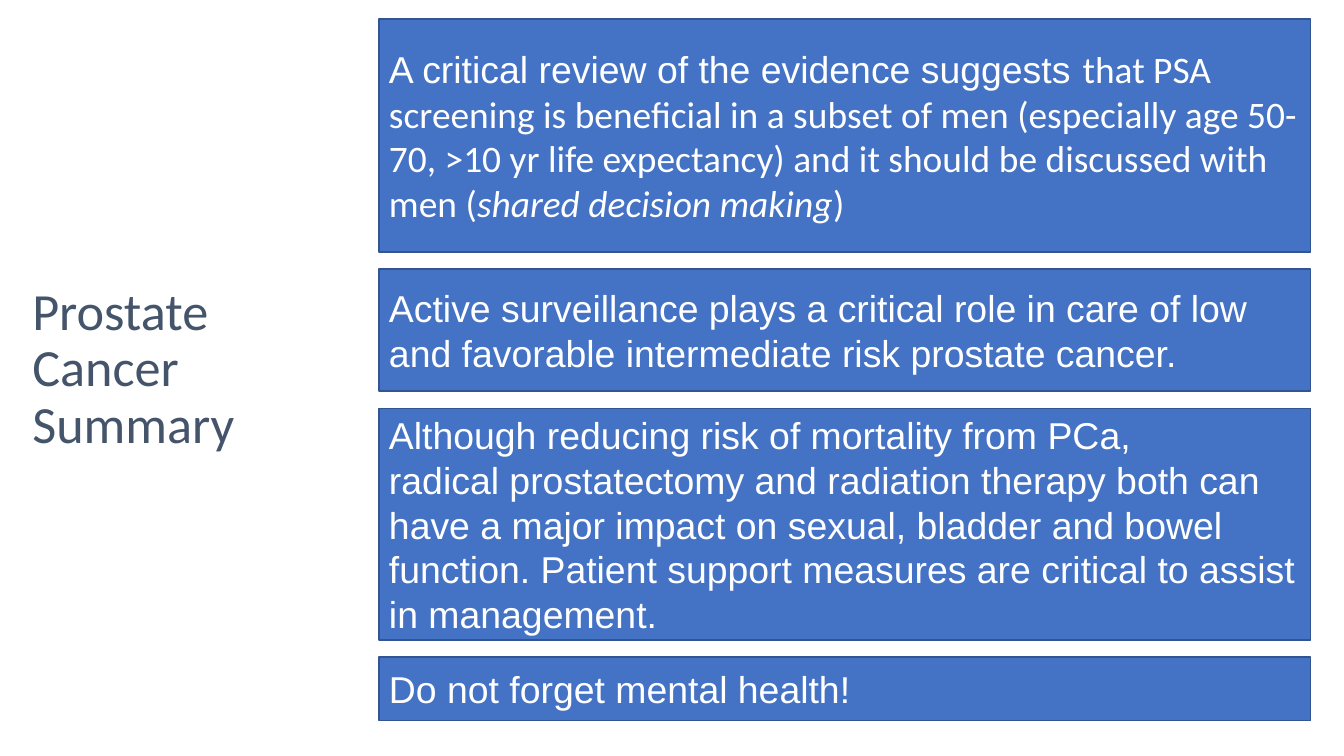
from pptx import Presentation
from pptx.dml.color import RGBColor
from pptx.enum.shapes import MSO_SHAPE
from pptx.enum.text import MSO_ANCHOR, MSO_AUTO_SIZE, PP_ALIGN
from pptx.util import Inches, Pt

COLORS = {"white": "FFFFFF", "blue": "4472C4", "edge": "325491", "slate": "44546A"}
TOP, GAP = 0.19, 0.17
BOXES = [
    (2.31, "A critical review of the evidence suggests ", [
        ("that PSA screening is beneficial in a subset of men (especially age "
         "50-70, >10 yr life expectancy) and it should be discussed with men (", False),
        ("shared decision making", True),
        (")", False),
    ]),
    (1.21, "Active surveillance plays a critical role in care of low and "
           "favorable intermediate risk prostate cancer.", []),
    (2.3, "Although reducing risk of mortality from PCa, \vradical prostatectomy "
          "and radiation therapy both can have a major impact on sexual, bladder "
          "and bowel function. Patient support measures are critical to assist "
          "in management.", []),
    (0.63, "Do not forget mental health!", []),
]


def color(name):
    return RGBColor.from_string(COLORS[name])


def place(shape, left, top, width, height):
    shape.left, shape.top = Inches(left), Inches(top)
    shape.width, shape.height = Inches(width), Inches(height)


def fill(shape, name):
    shape.fill.solid()
    shape.fill.fore_color.rgb = color(name)


def setup(frame):
    """Wrap the text, centre it vertically and keep its size."""
    frame.word_wrap = True
    frame.auto_size = MSO_AUTO_SIZE.NONE
    frame.vertical_anchor = MSO_ANCHOR.MIDDLE


def style(run, face, size, name, italic=False):
    font = run.font
    font.name, font.size, font.italic = face, Pt(size), italic
    font.color.rgb = color(name)


def add_title(slide, text):
    title = slide.shapes.title
    place(title, 0.22, TOP, 3.33, 6.96)
    fill(title, "white")
    frame = title.text_frame
    frame.text = text
    setup(frame)
    para = frame.paragraphs[0]
    para.alignment = PP_ALIGN.LEFT
    para.line_spacing = 0.9
    style(para.runs[0], "Calibri", 37.3, "slate")


def add_box(slide, top, height, lead, tail):
    """Add a blue box: lead text in Arial, then the tail parts in Calibri."""
    box = slide.shapes.add_shape(
        MSO_SHAPE.RECTANGLE, Inches(3.76), Inches(top), Inches(9.24), Inches(height))
    box.shadow.inherit = False
    fill(box, "blue")
    box.line.color.rgb = color("edge")
    box.line.width = Pt(1)
    setup(box.text_frame)
    para = box.text_frame.paragraphs[0]
    para.text = lead
    para.alignment = PP_ALIGN.LEFT
    for run in para.runs:
        style(run, "Arial", 26.7, "white")
    for text, italic in tail:
        run = para.add_run()
        run.text = text
        style(run, "Calibri", 26.7, "white", italic)


def main():
    deck = Presentation()
    deck.slide_width, deck.slide_height = Inches(13.33), Inches(7.5)
    slide = deck.slides.add_slide(deck.slide_layouts.get_by_name("Title Only"))
    add_title(slide, "Prostate Cancer Summary")
    top = TOP
    for height, lead, tail in BOXES:
        add_box(slide, top, height, lead, tail)
        top += height + GAP
    deck.save("out.pptx")


if __name__ == "__main__":
    main()
